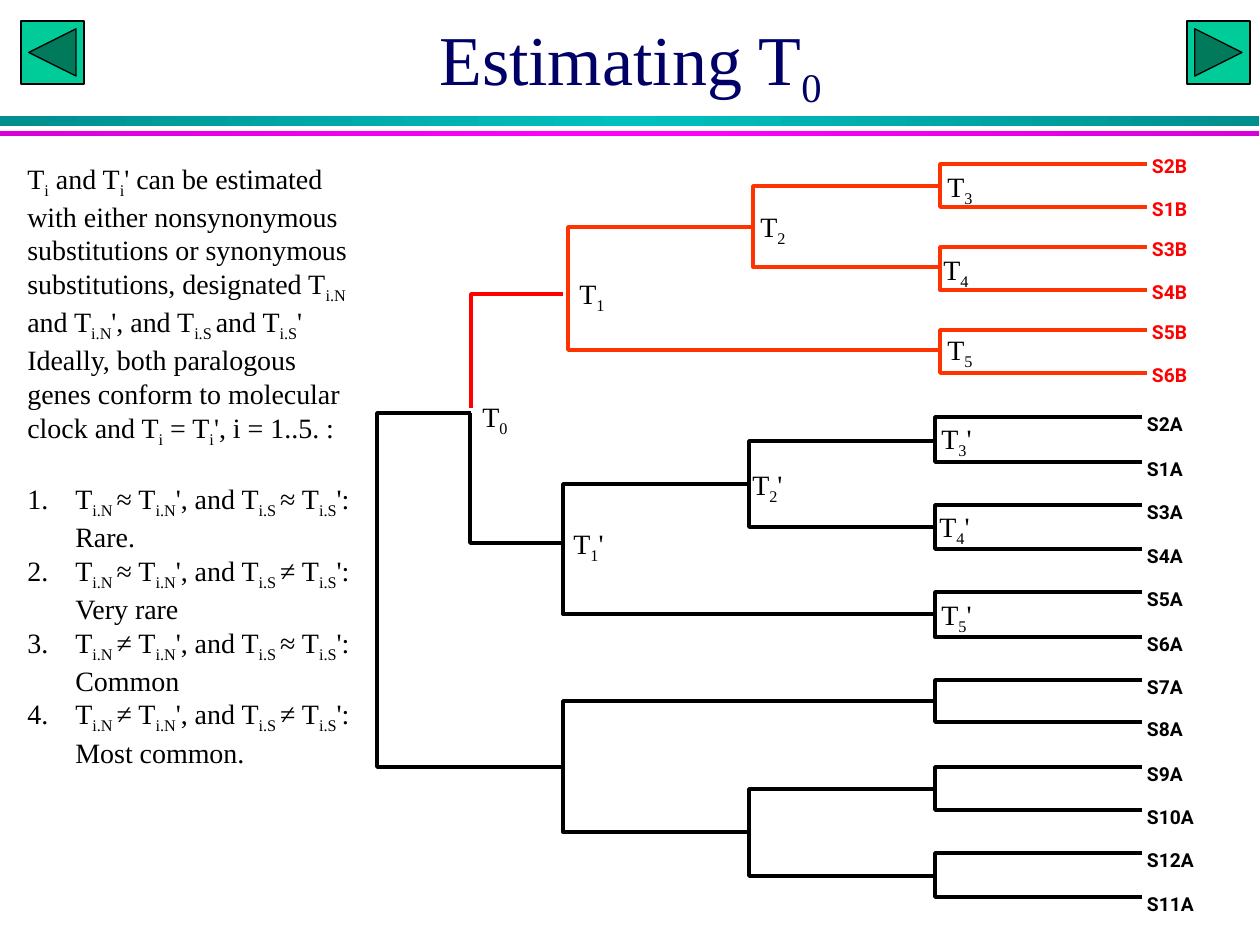
import copy
from dataclasses import dataclass

import pptx
import pptx.dml.color
import pptx.enum.shapes
import pptx.enum.text
import pptx.oxml
import pptx.util
from lxml import etree

SHAPE = pptx.enum.shapes.MSO_SHAPE
ANCHOR = pptx.enum.text.MSO_ANCHOR
ALIGN = pptx.enum.text.PP_ALIGN
AUTO_SIZE = pptx.enum.text.MSO_AUTO_SIZE
PX = 914400 / 126


@dataclass(frozen=True)
class Theme:
    serif: str = "Times New Roman"
    sans: str = "Roboto"
    title_size: int = 40
    body_size: int = 16
    leaf_size: int = 11
    title: str = "000066"
    ink: str = "000000"
    red: str = "FF0000"
    orange: str = "FF3300"
    button: str = "00CC99"
    teal: tuple = ("008E8E", "00C0C0")
    magenta: tuple = ("DA00DA", "FF00FF")


def emu(px):
    return pptx.util.Emu(round(px * PX))


def rgb(color):
    return pptx.dml.color.RGBColor.from_string(color)


class SlideBuilder:
    def __init__(self, page, theme):
        self.page = page
        self.theme = theme

    def shape(self, kind, left, top, width, height):
        shape = self.page.shapes.add_shape(kind, emu(left), emu(top), emu(width), emu(height))
        shape.shadow.inherit = False
        return shape

    def band(self, top, height, colors):
        """Full-width bar, shaded from the edge colour to the middle and back."""
        bar = self.shape(SHAPE.RECTANGLE, 0, top, 1259, height)
        bar.line.fill.background()
        bar.fill.gradient()
        bar.fill.gradient_angle = 0
        edge, middle = colors
        for stop, color in zip(bar.fill.gradient_stops, (edge, middle)):
            stop.color.rgb = rgb(color)
        stops = bar.fill._fill._gradFill.gsLst
        stops.append(copy.deepcopy(stops[0]))
        for stop, position in zip(bar.fill.gradient_stops, (0, 0.5, 1)):
            stop.position = position

    def button(self, kind, left):
        button = self.shape(kind, left, 21, 63, 63)
        button.fill.solid()
        button.fill.fore_color.rgb = rgb(self.theme.button)
        button.line.color.rgb = rgb(self.theme.ink)
        button.line.width = pptx.util.Pt(0.75)

    def text(self, left, top, width, height, lines, size, color=None, font=None, bold=False):
        """Text box with one paragraph per line; [brackets] mark subscripts."""
        box = self.page.shapes.add_textbox(emu(left), emu(top), emu(width), emu(height))
        frame = box.text_frame
        frame.word_wrap = True
        for number, line in enumerate(lines):
            para = frame.add_paragraph() if number else frame.paragraphs[0]
            para.font.size = pptx.util.Pt(size)
            para.font.name = font or self.theme.serif
            para.font.bold = bold
            para.font.color.rgb = rgb(color or self.theme.ink)
            for index, part in enumerate(line.replace("]", "[").split("[")):
                if part:
                    span = para.add_run()
                    span.text = part
                    if index % 2:
                        span.font._element.set("baseline", "-25000")
        return frame

    def node_label(self, left, top, label, width=59):
        frame = self.text(left, top, width, 47, [label], self.theme.body_size)
        frame.auto_size = AUTO_SIZE.SHAPE_TO_FIT_TEXT

    def leaf_label(self, left, top, name, color):
        width = 49 if len(name) > 3 else 38
        frame = self.text(left, top, width, 18, [name], self.theme.leaf_size,
                          color, self.theme.sans, bold=True)
        frame.margin_left = frame.margin_top = frame.margin_right = frame.margin_bottom = 0
        frame.word_wrap = False
        frame.auto_size = AUTO_SIZE.SHAPE_TO_FIT_TEXT

    def elbow(self, start, end, color):
        """Branch that runs up or down first, then across."""
        outline = self.page.shapes.build_freeform(*start, scale=PX)
        outline.add_line_segments([(start[0], end[1]), end], close=False)
        branch = outline.convert_to_shape()
        branch.shadow.inherit = False
        branch.fill.background()
        branch.line.color.rgb = rgb(color)
        branch.line.width = pptx.util.Pt(2)

    def tree(self, node, tip, rise, line_color, text_color):
        """Draw a node (x, y, children...); a leaf is (name, y)."""
        x, y, *children = node
        for child in children:
            if isinstance(child[0], str):
                name, level = child
                self.elbow((x, y), (tip, level), line_color)
                self.leaf_label(tip + 5, level - rise, name, text_color)
            else:
                self.elbow((x, y), child[:2], line_color)
                self.tree(child, tip, rise, line_color, text_color)

    def number(self, para):
        properties = para._p.get_or_add_pPr()
        properties.set("marL", str(emu(48)))
        properties.set("indent", str(-emu(48)))
        bullet = etree.Element(pptx.oxml.ns.qn("a:buAutoNum"), type="arabicPeriod")
        properties.insert_element_before(bullet, "a:tabLst", "a:defRPr", "a:extLst")


GENE_B = (568, 290,
          (753, 227,
           (940, 186, ("S2B", 164), ("S1B", 207)),
           (940, 267, ("S3B", 247), ("S4B", 290))),
          (940, 350, ("S5B", 330), ("S6B", 373)))
GENE_A = (563, 549,
          (749, 484,
           (935, 441, ("S2A", 417), ("S1A", 462)),
           (935, 527, ("S3A", 505), ("S4A", 549))),
          (935, 614, ("S5A", 592), ("S6A", 637)))
ROOT = (377, 659,
        (471, 413),
        (563, 767,
         (935, 701, ("S7A", 680), ("S8A", 722)),
         (749, 832,
          (935, 789, ("S9A", 767), ("S10A", 810)),
          (935, 876, ("S12A", 853), ("S11A", 897)))))

NODE_LABELS = [
    (470, 393, "T[0]"), (567, 270, "T[1]"), (748, 203, "T[2]"),
    (935, 163, "T[3]"), (931, 246, "T[4]"), (935, 326, "T[5]"),
    (561, 520, "T[1]'"), (740, 461, "T[2]'", 66), (929, 415, "T[3]'"),
    (927, 503, "T[4]'"), (929, 591, "T[5]'"),
]

INTRO = [
    "T[i] and T[i]' can be estimated with either nonsynonymous substitutions or synonymous "
    "substitutions, designated T[i.N] and T[i.N]', and T[i.S ]and T[i.S]'",
    "Ideally, both paralogous genes conform to molecular clock and T[i] = T[i]', i = 1..5. :",
]
CASES = [("≈", "≈", "Rare."), ("≈", "≠", "Very rare"),
         ("≠", "≈", "Common"), ("≠", "≠", "Most common.")]


def main():
    theme = Theme()
    deck = pptx.Presentation()
    deck.slide_width, deck.slide_height = emu(1260), emu(945)
    slide = SlideBuilder(deck.slides.add_slide(deck.slide_layouts[6]), theme)

    # Header: bands, navigation buttons and title
    slide.band(116, 10, theme.teal)
    slide.band(131, 5, theme.magenta)
    slide.button(SHAPE.ACTION_BUTTON_BACK_OR_PREVIOUS, 21)
    slide.button(SHAPE.ACTION_BUTTON_FORWARD_OR_NEXT, 1187)
    title = slide.text(95, 0, 1071, 126, ["Estimating T[0]"], theme.title_size, theme.title)
    title.vertical_anchor = ANCHOR.MIDDLE
    title.paragraphs[0].alignment = ALIGN.CENTER

    # Gene trees, and the two branches of the duplication
    slide.tree(ROOT, 1142, 5, theme.ink, theme.ink)
    slide.tree(GENE_A, 1142, 5, theme.ink, theme.ink)
    slide.tree(GENE_B, 1147, 10, theme.orange, theme.red)
    slide.elbow((470, 413), (562, 543), theme.ink)
    slide.elbow((471, 408), (563, 294), theme.red)
    for label in NODE_LABELS:
        slide.node_label(*label)

    # Explanation and numbered cases
    cases = [f"T[i.N ]{n} T[i.N]', and T[i.S ]{s} T[i.S]': {rate}" for n, s, rate in CASES]
    body = slide.text(15, 155, 362, 590, INTRO + cases, theme.body_size)
    numbered = body.paragraphs[len(INTRO):]
    numbered[0].space_before = pptx.util.Pt(19)
    for para in numbered:
        slide.number(para)

    deck.save("out.pptx")


if __name__ == "__main__":
    main()
